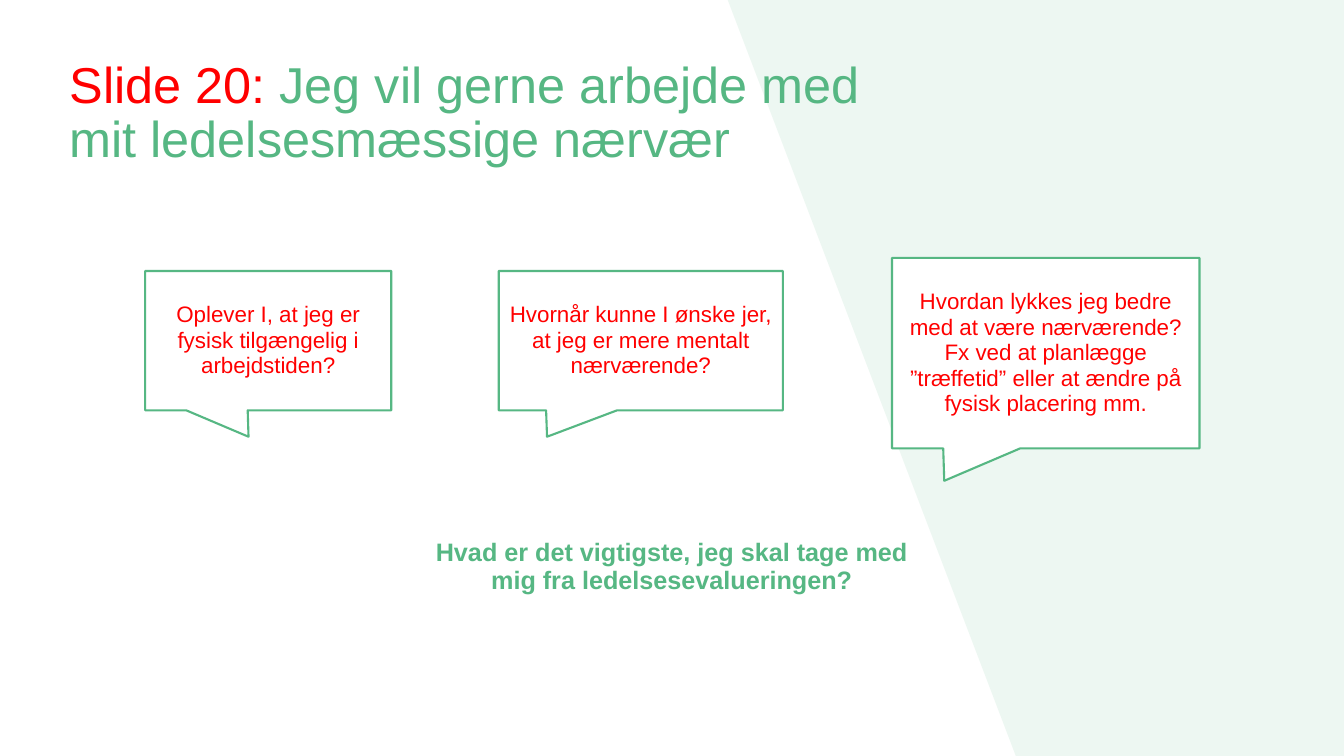
import pptx
import pptx.dml.color
import pptx.enum.shapes
import pptx.enum.text
import pptx.oxml
import pptx.oxml.ns
import pptx.util
from pptx.util import Cm

GREEN = pptx.dml.color.RGBColor(0x56, 0xB7, 0x83)
RED = pptx.dml.color.RGBColor(0xFF, 0x00, 0x00)
WHITE = pptx.dml.color.RGBColor(0xFF, 0xFF, 0xFF)
FONT = "Arial"
SLIDE_WIDTH, SLIDE_HEIGHT = Cm(33.87), Cm(19.05)

# Text, box (left, top, width, height) in cm, tip of the callout
QUESTIONS = [
    ("Oplever I, at jeg er fysisk tilgængelig i arbejdstiden?",
     (3.66, 6.83, 6.2, 3.51), (-0.08, 0.69)),
    ("Hvornår kunne I ønske jer, at jeg er mere mentalt nærværende?",
     (12.57, 6.83, 7.16, 3.51), (-0.33, 0.69)),
    ("Hvordan lykkes jeg bedre med at være nærværende? Fx ved at planlægge "
     "”træffetid” eller at ændre på fysisk placering mm.",
     (22.48, 6.5, 7.75, 4.8), (-0.33, 0.67)),
]


def format_paragraph(paragraph, size, color, bold=False):
    paragraph.alignment = pptx.enum.text.PP_ALIGN.CENTER
    paragraph.line_spacing = 0.95
    paragraph.font.name = FONT
    paragraph.font.size = pptx.util.Pt(size)
    paragraph.font.color.rgb = color
    paragraph.font.bold = bold


def add_background_wedge(slide, top_left, bottom_left, right, height):
    builder = slide.shapes.build_freeform(top_left, 0)
    builder.add_line_segments(
        [(right, 0), (right, height), (bottom_left, height)], close=True)
    wedge = builder.convert_to_shape()
    wedge.shadow.inherit = False
    wedge.line.fill.background()
    wedge.fill.solid()
    wedge.fill.fore_color.rgb = GREEN
    color = wedge.fill._xPr.find(".//" + pptx.oxml.ns.qn("a:srgbClr"))
    color.append(pptx.oxml.parse_xml(
        f'<a:alpha {pptx.oxml.ns.nsdecls("a")} val="10000"/>'))


def add_title(slide, left, top, width, height):
    title = slide.shapes.title
    title.left, title.top, title.width, title.height = left, top, width, height
    frame = title.text_frame
    frame.word_wrap = True
    frame.vertical_anchor = pptx.enum.text.MSO_ANCHOR.MIDDLE
    paragraph = frame.paragraphs[0]
    paragraph.alignment = pptx.enum.text.PP_ALIGN.LEFT
    paragraph.line_spacing = 0.9
    paragraph.font.name = FONT
    paragraph.font.size = pptx.util.Pt(36)
    for text, color in [
        ("Slide 20:", RED),
        (" Jeg vil gerne arbejde med mit ledelsesmæssige nærvær", GREEN),
    ]:
        run = paragraph.add_run()
        run.text = text
        run.font.color.rgb = color


def add_question(slide, text, box, tip):
    callout = slide.shapes.add_shape(
        pptx.enum.shapes.MSO_SHAPE.RECTANGULAR_CALLOUT, *map(Cm, box))
    callout.adjustments[0], callout.adjustments[1] = tip
    callout.shadow.inherit = False
    callout.fill.solid()
    callout.fill.fore_color.rgb = WHITE
    callout.line.color.rgb = GREEN
    callout.line.width = pptx.util.Pt(1.5)
    frame = callout.text_frame
    frame.word_wrap = True
    frame.margin_left = frame.margin_right = Cm(0.2)
    frame.vertical_anchor = pptx.enum.text.MSO_ANCHOR.MIDDLE
    frame.text = text
    format_paragraph(frame.paragraphs[0], 16, RED)


def add_closing_question(slide, left, top, width, height):
    frame = slide.shapes.add_textbox(left, top, width, height).text_frame
    frame.word_wrap = True
    frame.text = ("Hvad er det vigtigste, jeg skal tage med mig fra "
                  "ledelsesevalueringen?")
    format_paragraph(frame.paragraphs[0], 18, GREEN, bold=True)


def main():
    presentation = pptx.Presentation()
    presentation.slide_width = SLIDE_WIDTH
    presentation.slide_height = SLIDE_HEIGHT
    title_only_layout = presentation.slide_layouts[5]
    slide = presentation.slides.add_slide(title_only_layout)
    add_background_wedge(slide, Cm(18.34), Cm(25.6), SLIDE_WIDTH, SLIDE_HEIGHT)
    # The title lies in front of the wedge
    slide.shapes._spTree.append(slide.shapes.title._element)
    add_title(slide, Cm(1.5), Cm(1.47), Cm(22.2), Cm(2.82))
    for text, box, tip in QUESTIONS:
        add_question(slide, text, box, tip)
    add_closing_question(slide, Cm(10.67), Cm(13.44), Cm(12.52), Cm(1.73))
    presentation.save("out.pptx")


if __name__ == "__main__":
    main()
